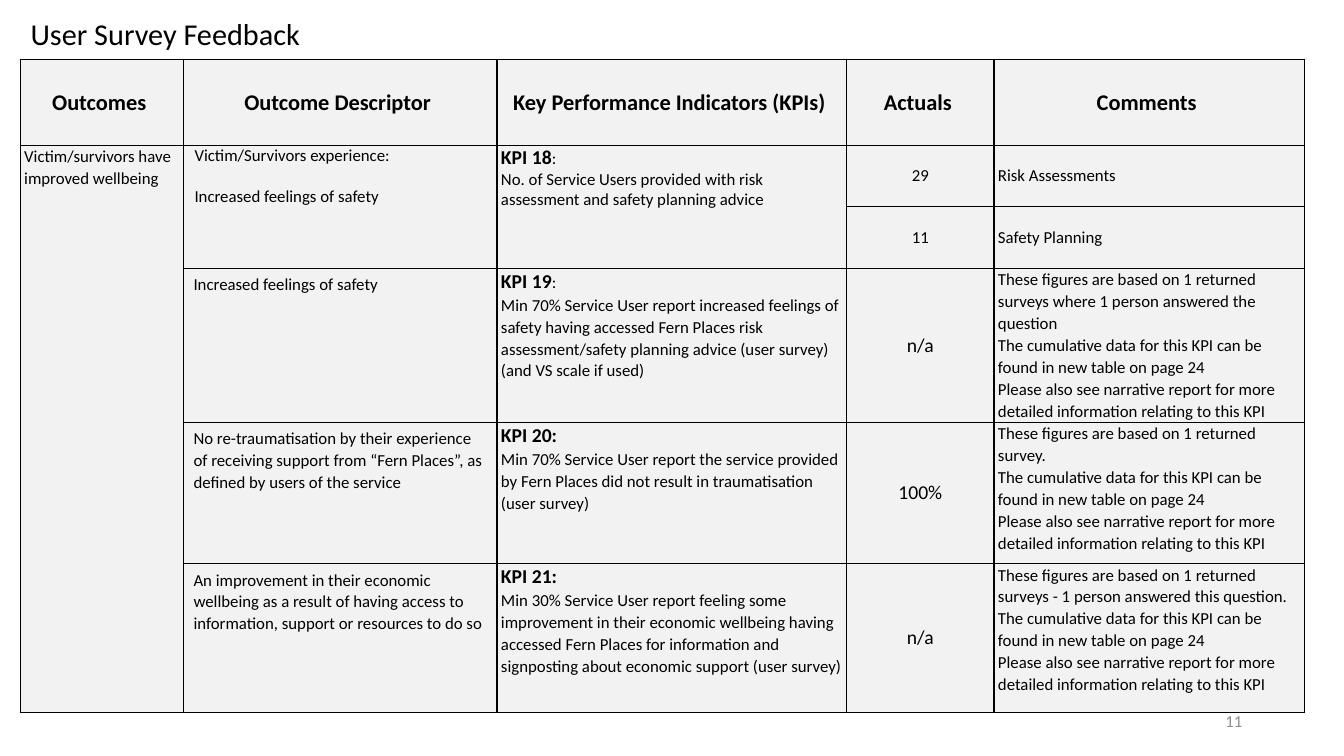
from dataclasses import dataclass
from lxml import etree
from pptx import Presentation, util as u
from pptx.dml.color import RGBColor
from pptx.enum import text as t
from pptx.oxml import ns

FONT = "Calibri"
BLACK, GREY, PALE = "000000", "8C8C8C", "F2F2F2"
WIDE, HIGH = u.Inches(13.33), u.Inches(7.5)
# Columns and rows in percent of the slide's width and height
COLS = [12.15, 23.33, 26.03, 10.95, 23.1]
ROWS = [11.4, 8.13, 8.13, 20.4, 18.67, 19.73]
LEFT, MID, RIGHT = t.PP_ALIGN.LEFT, t.PP_ALIGN.CENTER, t.PP_ALIGN.RIGHT


@dataclass
class Entry:
    row: int
    col: int
    lines: list[str]
    head: str = ""       # bold start of the first line
    size: float = 12
    bold: bool = False
    align: t.PP_ALIGN = LEFT
    middle: bool = False
    pad: float = 0.04    # side margin in inches
    top: float = 0
    lead: float = 1.07
    gap: float = 0       # points after each line
    span: int = 1


def across(share: float) -> int:
    return int(WIDE * share / 100)


def down(share: float) -> int:
    return int(HIGH * share / 100)


def tint(code: str) -> RGBColor:
    return RGBColor.from_string(code)


def style(run, size: float, bold: bool = False, color: str = BLACK) -> None:
    font = run.font
    font.name, font.size, font.bold = FONT, u.Pt(size), bold
    font.color.rgb = tint(color)


def edge(cell) -> None:
    """Draw a thin black line on all four sides of a cell."""
    props = cell._tc.get_or_add_tcPr()
    for side in "LRTB":
        line = etree.SubElement(props, ns.qn(f"a:ln{side}"), w=str(u.Pt(1)))
        fill = etree.SubElement(line, ns.qn("a:solidFill"))
        etree.SubElement(fill, ns.qn("a:srgbClr"), val=BLACK)


def write(grid, item: Entry) -> None:
    cell = grid.cell(item.row, item.col)
    if item.span > 1:
        cell.merge(grid.cell(item.row + item.span - 1, item.col))
    cell.margin_left = cell.margin_right = u.Inches(item.pad)
    cell.margin_top = cell.margin_bottom = u.Inches(item.top)
    cell.vertical_anchor = t.MSO_ANCHOR.MIDDLE if item.middle else t.MSO_ANCHOR.TOP
    frame = cell.text_frame
    frame.text = "\n".join(item.lines)
    for para in frame.paragraphs:
        para.alignment, para.line_spacing = item.align, item.lead
        para.space_after = u.Pt(item.gap)
        for run in para.runs:
            style(run, item.size, item.bold)
    if item.head:
        first = frame.paragraphs[0]
        tail = first.text.removeprefix(item.head)
        first.text = item.head
        style(first.runs[0], 14, True)
        if tail:
            rest = first.add_run()
            rest.text = tail
            style(rest, 12)


def kpi(row: int, num: int, mark: str, note: str, **more) -> Entry:
    head = f"KPI {num}" + (":" if mark == "bold" else "")
    start = head if mark == "bold" else head + ":"
    return Entry(row, 2, [start, note], head=head, **more)


def actual(row: int, value: str, size: float = 14) -> Entry:
    return Entry(row, 3, [value], size=size, align=MID, middle=True, lead=1)


def aim(row: int, note: str) -> Entry:
    return Entry(row, 1, [note], pad=0.1, top=0.05)


def remark(row: int, basis: str) -> Entry:
    return Entry(row, 4, [
        basis,
        "The cumulative data for this KPI can be found in new table on page 24",
        "Please also see narrative report for more detailed information relating to this KPI"])


HEADS = ["Outcomes", "Outcome Descriptor", "Key Performance Indicators (KPIs)",
         "Actuals", "Comments"]
ITEMS = [Entry(0, col, [head + " "], size=16, bold=True, align=MID, middle=True, pad=0.07)
         for col, head in enumerate(HEADS)]
ITEMS += [
    Entry(1, 0, ["Victim/survivors have improved wellbeing"], span=5),
    # KPI 18
    Entry(1, 1, ["Victim/Survivors experience:", "Increased feelings of safety"],
          pad=0.11, lead=1, gap=14.6, span=2),
    kpi(1, 18, "plain", "No. of Service Users provided with risk assessment "
        "and safety planning advice", lead=1, span=2),
    actual(1, "29", 12),
    Entry(1, 4, ["Risk Assessments"], middle=True, lead=1),
    actual(2, "11", 12),
    Entry(2, 4, ["Safety Planning"], middle=True, lead=1),
    # KPI 19
    aim(3, "Increased feelings of safety"),
    kpi(3, 19, "plain", "Min 70% Service User report increased feelings of safety having "
        "accessed Fern Places risk assessment/safety planning advice (user survey) "
        "(and VS scale if used)"),
    actual(3, "n/a"),
    remark(3, "These figures are based on 1 returned surveys where 1 person answered "
           "the question"),
    # KPI 20
    aim(4, "No re-traumatisation by their experience of receiving support from "
        "“Fern Places”, as defined by users of the service"),
    kpi(4, 20, "bold", "Min 70% Service User report the service provided by Fern Places "
        "did not result in traumatisation (user survey)"),
    actual(4, "100%"),
    remark(4, "These figures are based on 1 returned survey."),
    # KPI 21
    aim(5, "An improvement in their economic wellbeing as a result of having access to "
        "information, support or resources to do so"),
    kpi(5, 21, "bold", "Min 30% Service User report feeling some improvement in their "
        "economic wellbeing having accessed Fern Places for information and signposting "
        "about economic support (user survey)"),
    actual(5, "n/a"),
    remark(5, "These figures are based on 1 returned surveys - 1 person answered "
           "this question."),
]


def label(box, words: str, size: float, color: str, align: t.PP_ALIGN) -> None:
    frame = box.text_frame
    frame.text, frame.word_wrap = words, True
    frame.vertical_anchor = t.MSO_ANCHOR.MIDDLE
    frame.paragraphs[0].alignment = align
    style(frame.paragraphs[0].runs[0], size, color=color)


def main() -> None:
    deck = Presentation()
    deck.slide_width, deck.slide_height = WIDE, HIGH
    slide = deck.slides.add_slide(deck.slide_layouts[5])

    # Title
    title = slide.shapes.title
    title.left, title.top = across(1), down(1.3)
    title.width, title.height = across(28.4), down(6.3)
    label(title, "User Survey Feedback", 21.6, BLACK, LEFT)
    title.text_frame.margin_left = u.Inches(0.17)
    title.text_frame.auto_size = t.MSO_AUTO_SIZE.NONE

    # Table
    grid = slide.shapes.add_table(len(ROWS), len(COLS), across(1.5), down(7.84),
                                  across(sum(COLS)), down(sum(ROWS))).table
    grid.first_row = grid.horz_banding = False
    for col, share in zip(grid.columns, COLS):
        col.width = across(share)
    for row, share in zip(grid.rows, ROWS):
        row.height = down(share)
    for cell in grid.iter_cells():
        edge(cell)
        cell.fill.solid()
        cell.fill.fore_color.rgb = tint(PALE)
    for item in ITEMS:
        write(grid, item)

    # Page number
    page = slide.shapes.add_textbox(across(70.67), down(92.67), across(22.5), down(5.33))
    label(page, "11", 12, GREY, RIGHT)

    deck.save("out.pptx")


if __name__ == "__main__":
    main()
